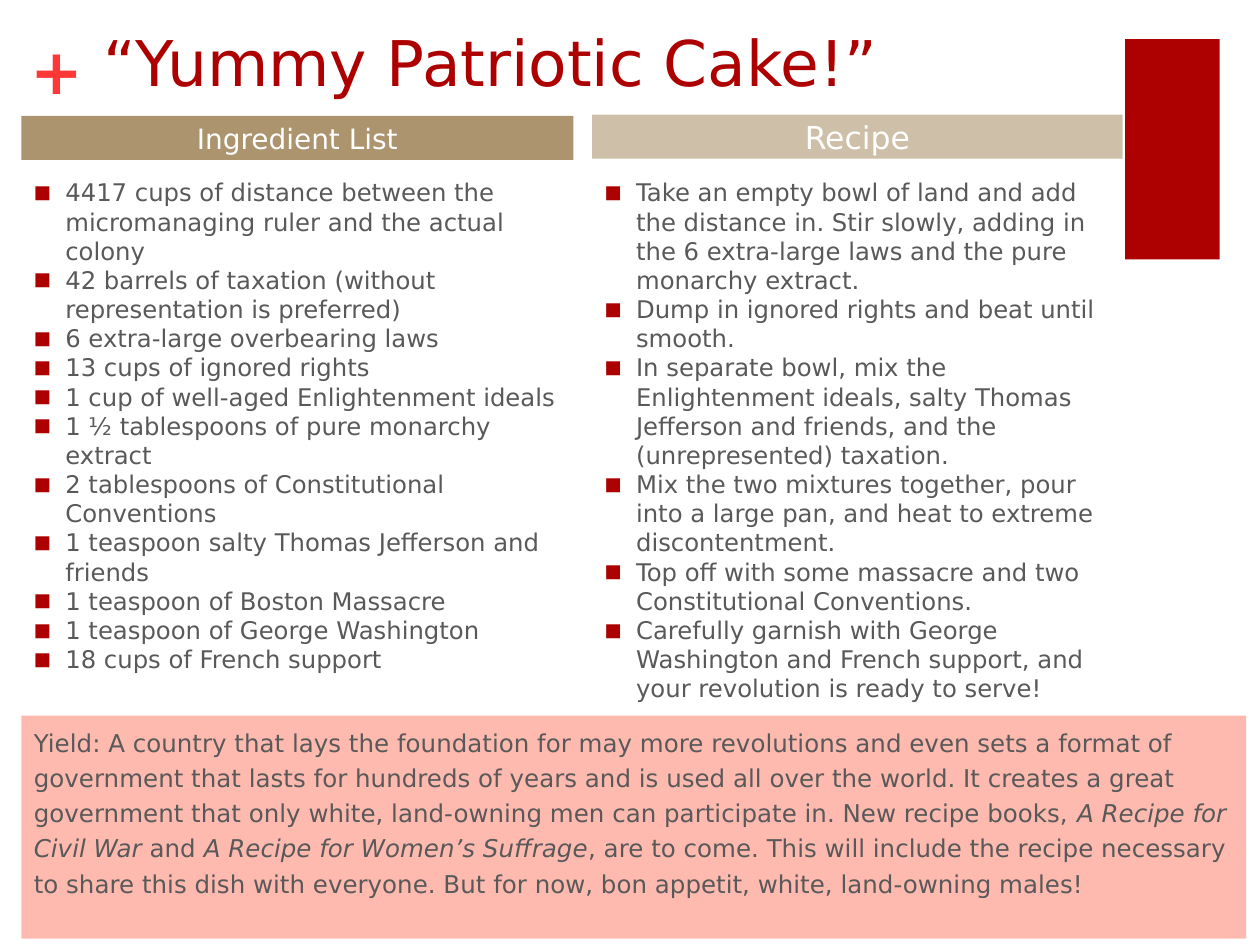
from lxml import etree
from pptx import Presentation
from pptx.dml.color import RGBColor
from pptx.enum.shapes import MSO_SHAPE
from pptx.enum.text import MSO_ANCHOR, MSO_AUTO_SIZE, PP_ALIGN
from pptx.oxml.ns import qn
from pptx.util import Inches, Pt

RECT = MSO_SHAPE.RECTANGLE
TOP, MIDDLE = MSO_ANCHOR.TOP, MSO_ANCHOR.MIDDLE
LEFT, CENTER = PP_ALIGN.LEFT, PP_ALIGN.CENTER
FONT = "DejaVu Sans"
RED, GREY, WHITE = "AD0101", "595959", "FFFFFF"

TITLE = "“Yummy Patriotic Cake!”"
INGREDIENTS = [
    "4417 cups of distance between the micromanaging ruler and the actual colony",
    "42 barrels of taxation (without representation is preferred)",
    "6 extra-large overbearing laws",
    "13 cups of ignored rights",
    "1 cup of well-aged Enlightenment ideals",
    "1 ½ tablespoons of pure monarchy extract",
    "2 tablespoons of Constitutional Conventions",
    "1 teaspoon salty Thomas Jefferson and friends",
    "1 teaspoon of Boston Massacre",
    "1 teaspoon of George Washington",
    "18 cups of French support",
]
STEPS = [
    "Take an empty bowl of land and add the distance in. Stir slowly, adding in "
    "the 6 extra-large laws and the pure monarchy extract.",
    "Dump in ignored rights and beat until smooth.",
    "In separate bowl, mix the Enlightenment ideals, salty Thomas Jefferson and "
    "friends, and the (unrepresented) taxation.",
    "Mix the two mixtures together, pour into a large pan, and heat to extreme "
    "discontentment.",
    "Top off with some massacre and two Constitutional Conventions.",
    "Carefully garnish with George Washington and French support, and your "
    "revolution is ready to serve!",
]
COLUMNS = [
    ("Ingredient List", 16, "AC956E", (0.17, 0.92, 4.38, 0.35), 4.38, INGREDIENTS),
    ("Recipe", 18, "CDBFA8", (4.7, 0.91, 4.21, 0.35), 4.18, STEPS),
]
YIELD = [
    ("Yield: A country that lays the foundation for may more revolutions and even "
     "sets a format of government that lasts for hundreds of years and is used all "
     "over the world. It creates a great government that only white, land-owning "
     "men can participate in. New recipe books, ", False),
    ("A Recipe for Civil War", True),
    (" and ", False),
    ("A Recipe for Women’s Suffrage", True),
    (", are to come. This will include the recipe necessary to share this dish with "
     "everyone. But for now, bon appetit, white, land-owning males!", False),
]


def rgb(color):
    return RGBColor.from_string(color)


def place(sp, box):
    sp.left, sp.top, sp.width, sp.height = (Inches(v) for v in box)


def add_rect(s, box, fill):
    sp = s.shapes.add_shape(RECT, *(Inches(v) for v in box))
    sp.shadow.inherit = False
    sp.fill.solid()
    sp.fill.fore_color.rgb = rgb(fill)
    sp.line.fill.background()
    return sp


def add_box(s, box):
    return s.shapes.add_textbox(*(Inches(v) for v in box))


def write(sp, paragraphs, size, color, align=LEFT, anchor=TOP, inset=(0.1, 0.05),
          bold=False):
    tf = sp.text_frame
    tf.word_wrap = True
    tf.auto_size = MSO_AUTO_SIZE.NONE
    tf.vertical_anchor = anchor
    tf.margin_left = tf.margin_right = Inches(inset[0])
    tf.margin_top = tf.margin_bottom = Inches(inset[1])
    for i, runs in enumerate(paragraphs):
        p = tf.add_paragraph() if i else tf.paragraphs[0]
        p.alignment = align
        p.font.name, p.font.size, p.font.bold = FONT, Pt(size), bold
        p.font.color.rgb = rgb(color)
        for text, italic in runs:
            r = p.add_run()
            r.text = text
            if italic:
                r.font.italic = True
    return tf


def add_bullets(tf, color):
    for p in tf.paragraphs:
        pPr = p._p.get_or_add_pPr()
        pPr.set("marL", str(Inches(0.25)))
        pPr.set("indent", str(Inches(-0.25)))
        buClr = etree.Element(qn("a:buClr"))
        etree.SubElement(buClr, qn("a:srgbClr"), val=color)
        bullet = [
            buClr,
            etree.Element(qn("a:buSzPct"), val="75000"),
            etree.Element(qn("a:buFont"), typeface=FONT),
            etree.Element(qn("a:buChar"), char="■"),
        ]
        for i, element in enumerate(bullet):
            pPr.insert(i, element)


prs = Presentation()
prs.slide_width, prs.slide_height = Inches(10), Inches(7.5)
s = prs.slides.add_slide(prs.slide_layouts[5])

place(s.shapes.title, (0.72, 0.14, 8.26, 1.22))
write(s.shapes.title, [[(TITLE, False)]], 36, RED)

add_rect(s, (8.93, 0.31, 0.75, 1.75), RED)
write(add_box(s, (0.24, 0.25, 0.4, 0.61)), [[("+", False)]], 36, "FE3737",
      inset=(0, 0), bold=True)

for heading, size, fill, box, width, items in COLUMNS:
    write(add_rect(s, box, fill), [[(heading, False)]], size, WHITE,
          CENTER, MIDDLE, (0.1, 0))
    body = add_box(s, (box[0], 1.36, width, 4.49))
    add_bullets(write(body, [[(item, False)] for item in items], 13.9, GREY), RED)

tf = write(add_rect(s, (0.17, 5.68, 9.72, 1.77), "FFBAB0"), [YIELD], 14, GREY)
tf.paragraphs[0].line_spacing = 1.2

prs.save("out.pptx")
